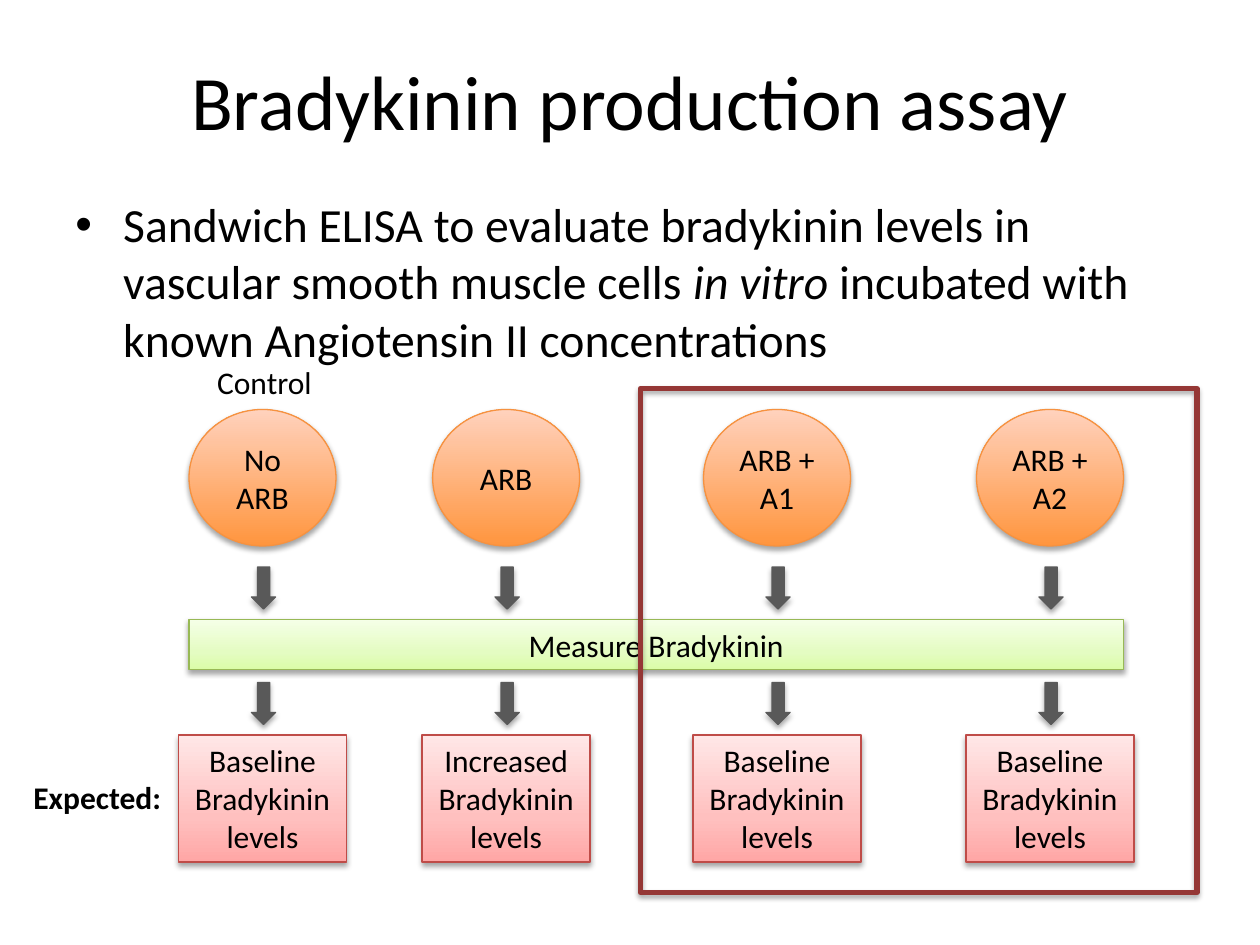
from lxml import etree
from pptx import Presentation
from pptx import util as u
from pptx.dml.color import RGBColor
from pptx.enum import shapes, text
from pptx.oxml import parse_xml
from pptx.oxml.ns import nsdecls, qn

COLORS = {"text": "000000", "arrow": "595959", "frame": "953735",
          "cell_line": "F69240", "bar_line": "98B955", "result_line": "BF4C48"}
GRADIENTS = {"cell": [(0, "FF953E"), (100, "FFD2BD")],
             "bar": [(0, "DAFDA7"), (35, "E4FCC2"), (100, "F5FFE7")],
             "result": [(0, "FFA6A5"), (35, "FFC0BF"), (100, "FFE7E7")]}
MIDDLE, TOP = text.MSO_ANCHOR.MIDDLE, text.MSO_ANCHOR.TOP
CENTER, LEFT = text.PP_ALIGN.CENTER, text.PP_ALIGN.LEFT
KIND = shapes.MSO_SHAPE

prs = Presentation()
prs.slide_width, prs.slide_height = u.Inches(10), u.Inches(7.5)
s = prs.slides.add_slide(prs.slide_layouts[6])
UNIT = prs.slide_width / 120  # the grid has 120 columns and 90 rows


def write(sp, words, size=18, bold=False, align=CENTER, anchor=TOP, wrap=True):
    """Fill a shape with one paragraph; words is a list of (text, italic)."""
    tf = sp.text_frame
    tf.word_wrap, tf.vertical_anchor = wrap, anchor
    p = tf.paragraphs[0]
    p.alignment = align
    for words_part, italic in words:
        r = p.add_run()
        r.text = words_part
        r.font.name, r.font.size = "Calibri", u.Pt(size)
        r.font.bold, r.font.italic = bold, italic
        r.font.color.rgb = RGBColor.from_string(COLORS["text"])
    return p


def add_shape(kind, box, line, fill=None, gradient=None, line_width=0.75):
    """Draw a preset shape with a soft shadow; box is in grid units."""
    sp = s.shapes.add_shape(kind, *[round(n * UNIT) for n in box])
    sp.line.color.rgb = RGBColor.from_string(COLORS[line])
    sp.line.width = u.Pt(line_width)
    if fill:
        sp.fill.solid()
        sp.fill.fore_color.rgb = RGBColor.from_string(COLORS[fill])
    else:
        sp.fill.background()
    props = sp._element.spPr
    if gradient:
        stops = "".join(f'<a:gs pos="{pos * 1000}"><a:srgbClr val="{color}"/></a:gs>'
                        for pos, color in GRADIENTS[gradient])
        props.replace(props.find(qn("a:noFill")), parse_xml(
            f'<a:gradFill {nsdecls("a")} rotWithShape="1"><a:gsLst>{stops}</a:gsLst>'
            '<a:lin ang="16200000" scaled="0"/></a:gradFill>'))
    props.append(parse_xml(
        f'<a:effectLst {nsdecls("a")}><a:outerShdw blurRad="{u.Pt(3.1)}" dist="{u.Pt(1.8)}" '
        'dir="5400000" rotWithShape="0"><a:srgbClr val="000000"><a:alpha val="35000"/>'
        '</a:srgbClr></a:outerShdw></a:effectLst>'))
    return sp


# Title and body
title = s.shapes.add_textbox(*[round(n * UNIT) for n in (6, 2, 108, 15)])
write(title, [("Bradykinin production assay", False)], size=44, anchor=MIDDLE)

body = s.shapes.add_textbox(*[round(n * UNIT) for n in (6, 18, 108, 15)])
p = write(body, [
    ("Sandwich ELISA to evaluate bradykinin levels in vascular smooth muscle cells ", False),
    ("in vitro ", True),
    ("incubated with known Angiotensin II concentrations", False)], size=27.2, align=LEFT)
pPr = p._p.get_or_add_pPr()
pPr.set("marL", str(u.Inches(0.38)))
pPr.set("indent", str(-u.Inches(0.38)))
etree.SubElement(pPr, qn("a:buFont")).set("typeface", "Arial")
etree.SubElement(pPr, qn("a:buChar")).set("char", "•")

# Measurement bar
bar = add_shape(KIND.RECTANGLE, (18, 59, 89, 4.8), "bar_line", gradient="bar")
write(bar, [("Measure Bradykinin", False)])

# One column per treatment: centre, treatment, expected level
treatments = [(25, "No ARB", "Baseline"), (48.2, "ARB", "Increased"),
              (74, "ARB + A1", "Baseline"), (100, "ARB + A2", "Baseline")]
for center, treatment, level in treatments:
    cell = add_shape(KIND.OVAL, (center - 7, 39, 14, 13), "cell_line", gradient="cell")
    write(cell, [(treatment, False)], anchor=MIDDLE)
    for row in (56, 67):
        arrow = add_shape(KIND.RIGHT_ARROW, (center - 1.9, row - 1.15, 4, 2.3),
                          "arrow", fill="arrow")
        arrow.rotation = 90
    result = add_shape(KIND.RECTANGLE, (center - 8, 70, 16, 12.1),
                       "result_line", gradient="result")
    write(result, [(f"{level} Bradykinin levels", False)])

# Row and column labels
control = s.shapes.add_textbox(*[round(n * UNIT) for n in (19.5, 34, 11.5, 4.8)])
write(control, [("Control", False)], align=LEFT, wrap=False)
expected = s.shapes.add_textbox(*[round(n * UNIT) for n in (2, 73.5, 16, 4.8)])
write(expected, [("Expected:", False)], bold=True, align=LEFT)

# Frame around the two test treatments
add_shape(KIND.RECTANGLE, (61, 37, 53, 48), "frame", line_width=3)

prs.save("out.pptx")
